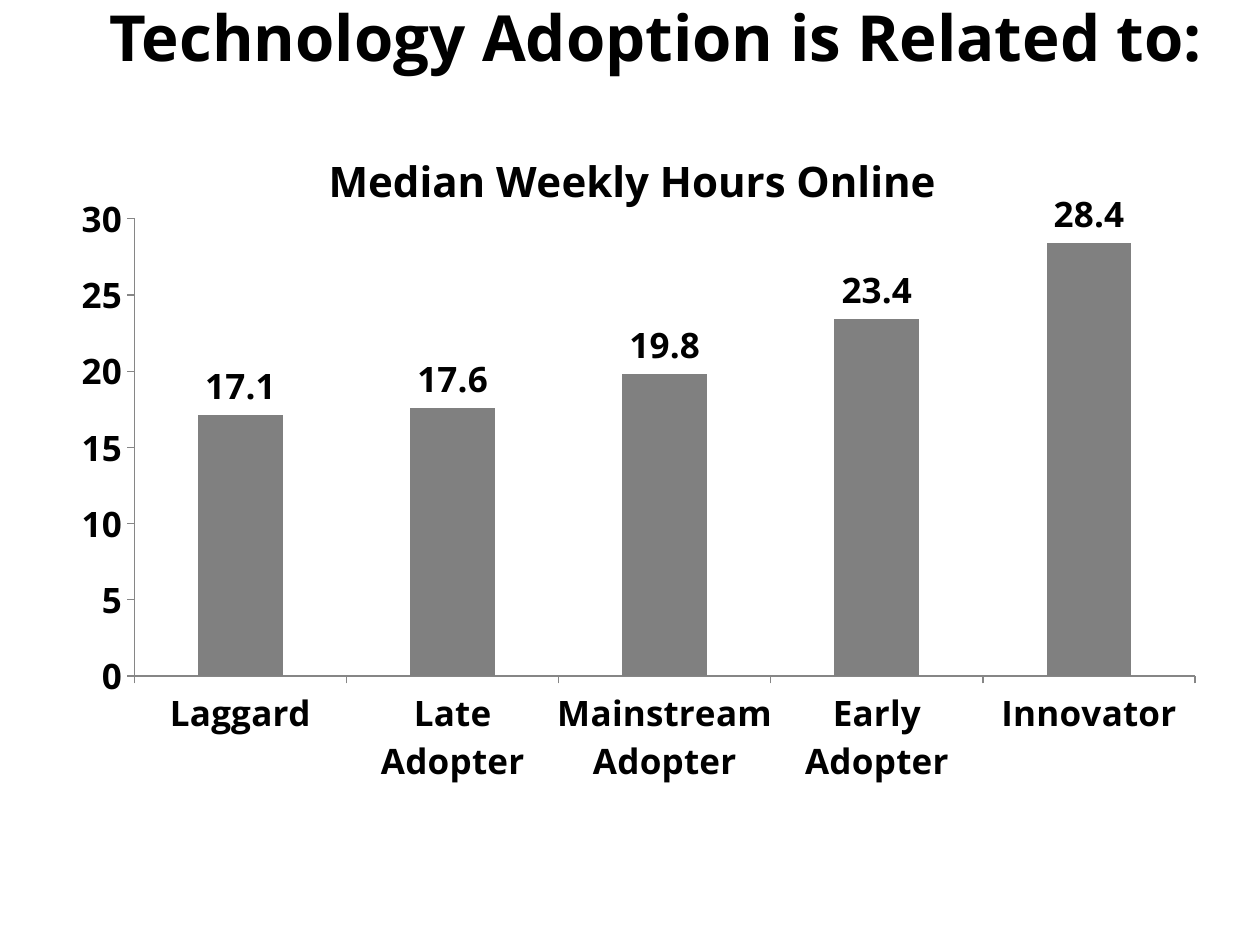
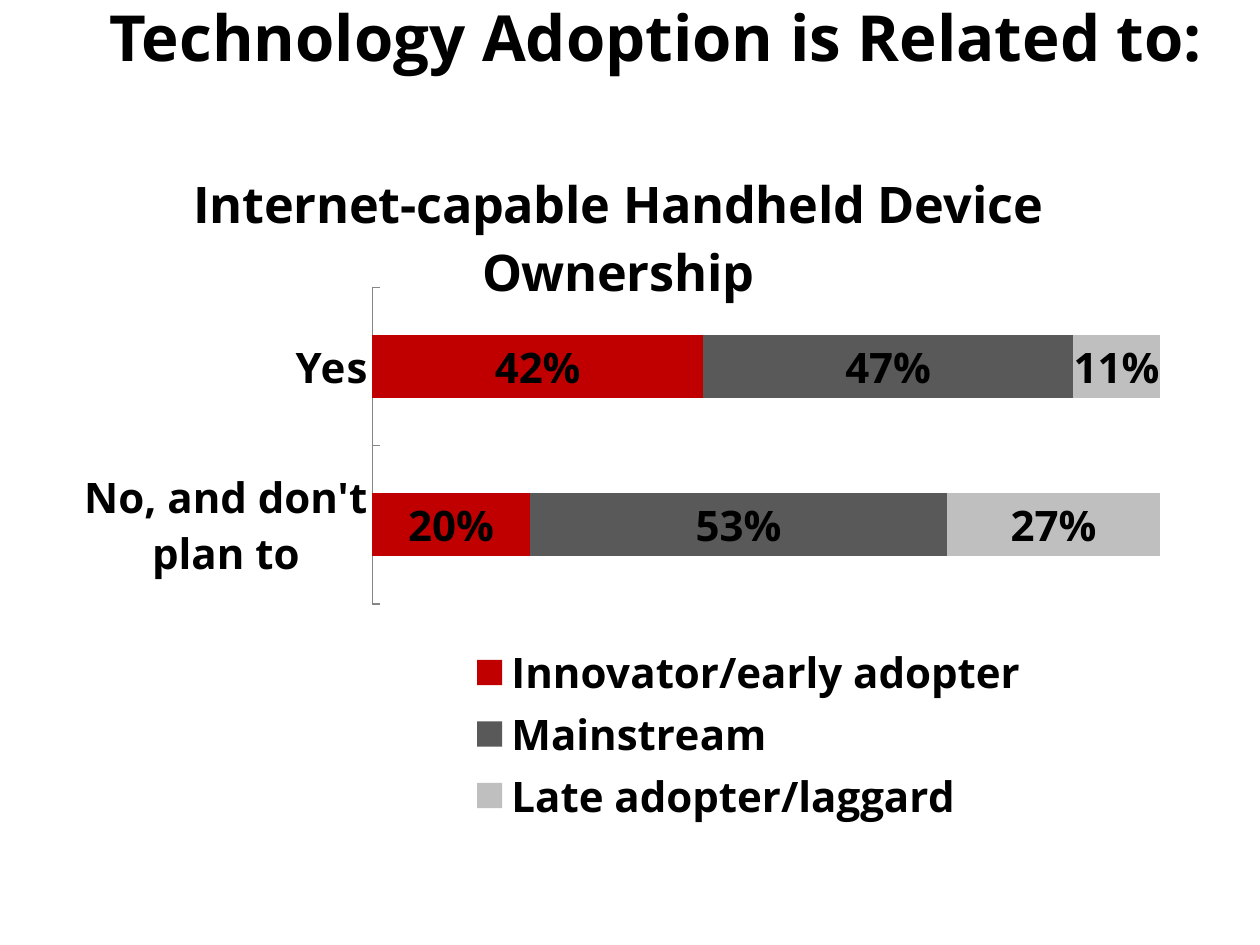
"""Build two chart slides on what technology adoption is related to."""
from dataclasses import dataclass

from lxml import etree
from pptx import Presentation
from pptx import util as u
from pptx.chart.data import CategoryChartData
from pptx.dml.color import RGBColor
from pptx.enum import chart as ch, text
from pptx.oxml.ns import qn

HEADING = "Technology Adoption is Related to:"
HEADING_BOX = (0.42, 0, 9.58, 1.03)

CHARTS = [
    dict(
        title="Median Weekly Hours Online",
        kind=ch.XL_CHART_TYPE.COLUMN_CLUSTERED,
        box=(0.42, 1, 9.25, 5.67),
        size=20, title_size=24,
        title_at=(0.23, 0.02),
        plot=(0.07, 0.13, 0.91, 0.64),
        categories=["Laggard", "Late\nAdopter", "Mainstream\nAdopter",
                    "Early\nAdopter", "Innovator"],
        series=[("Series 1", [17.1, 17.6, 19.8, 23.4, 28.4], "bar")],
        axis_format="General", label_format="####.0",
        label_position=ch.XL_LABEL_POSITION.OUTSIDE_END,
        tick=ch.XL_TICK_MARK.OUTSIDE,
        show_values=True, overlap=0, legend=None,
    ),
    dict(
        title="Internet-capable Handheld Device Ownership",
        kind=ch.XL_CHART_TYPE.BAR_STACKED_100,
        box=(0.25, 1, 9.33, 5.58),
        size=24, title_size=28.8,
        title_at=(0.13, 0.04),
        plot=(0.29, 0.23, 0.67, 0.45),
        categories=["No, and don't plan to", "Yes"],
        series=[("Innovator/early adopter", [0.20, 0.42], "innovator"),
                ("Mainstream", [0.53, 0.47], "mainstream"),
                ("Late adopter/laggard", [0.27, 0.11], "laggard")],
        axis_format="0%", label_format="0%",
        label_position=ch.XL_LABEL_POSITION.CENTER,
        tick=ch.XL_TICK_MARK.INSIDE,
        show_values=False, overlap=100, legend=(0.34, 0.73, 0.54, 0.27),
    ),
]


@dataclass(frozen=True)
class Theme:
    """Colours, font and heading size."""
    font: str = "Open Sans"
    heading: float = 36.3
    ink: str = "000000"
    axis: str = "868686"
    bar: str = "808080"
    innovator: str = "C00000"
    mainstream: str = "595959"
    laggard: str = "BFBFBF"


THEME = Theme()


def rgb(name):
    """Return a theme colour."""
    return RGBColor.from_string(getattr(THEME, name))


def style_font(font, size):
    """Apply the bold theme font."""
    font.name, font.size, font.bold = THEME.font, u.Pt(size), True
    font.color.rgb = rgb("ink")


def write(tf, content, size, align=None, spacing=None):
    """Write one formatted paragraph."""
    p = tf.paragraphs[0]
    p.alignment, p.line_spacing = align, spacing
    r = p.add_run()
    r.text = content
    style_font(r.font, size)


def place(parent, index, fractions, inner=False):
    """Give a chart part a manual layout in fractions of the chart."""
    for old in parent.findall(qn("c:layout")):
        parent.remove(old)
    layout = etree.Element(qn("c:layout"))
    manual = etree.SubElement(layout, qn("c:manualLayout"))
    values = [("layoutTarget", "inner")] if inner else []
    values += [("xMode", "edge"), ("yMode", "edge")]
    values += zip("xywh", fractions)
    for tag, value in values:
        etree.SubElement(manual, qn("c:" + tag)).set("val", str(value))
    parent.insert(index, layout)


def add_heading(s):
    """Fill and place the slide title."""
    sp = s.shapes.title
    sp.left, sp.top, sp.width, sp.height = map(u.Inches, HEADING_BOX)
    tf = sp.text_frame
    tf.word_wrap = True
    tf.auto_size = text.MSO_AUTO_SIZE.NONE
    tf.vertical_anchor = text.MSO_ANCHOR.TOP
    write(tf, HEADING, THEME.heading, align=text.PP_ALIGN.CENTER, spacing=0.9)


def format_axes(chart, d):
    """Style both axes."""
    for axis in (chart.category_axis, chart.value_axis):
        axis.has_major_gridlines = False
        axis.major_tick_mark = d["tick"]
        axis.minor_tick_mark = ch.XL_TICK_MARK.NONE
        axis.format.line.color.rgb = rgb("axis")
        axis.format.line.width = u.Pt(0.75)
        style_font(axis.tick_labels.font, d["size"])
    chart.value_axis.tick_labels.number_format = d["axis_format"]
    chart.value_axis.tick_labels.number_format_is_linked = False
    chart.value_axis.visible = d["show_values"]


def format_series(plot, d):
    """Colour and label the bars."""
    plot.gap_width, plot.overlap = 150, d["overlap"]
    plot.vary_by_categories = False
    for series, (_, _, colour) in zip(plot.series, d["series"]):
        series.format.fill.solid()
        series.format.fill.fore_color.rgb = rgb(colour)
        series.invert_if_negative = False
        labels = series.data_labels
        labels.show_value = True
        labels.number_format = d["label_format"]
        labels.number_format_is_linked = False
        labels.position = d["label_position"]
        style_font(labels.font, d["size"])


def add_chart(s, d):
    """Add one bar chart with its title and legend."""
    data = CategoryChartData()
    data.categories = d["categories"]
    for name, values, _ in d["series"]:
        data.add_series(name, values)
    chart = s.shapes.add_chart(d["kind"], *map(u.Inches, d["box"]), data).chart
    style_font(chart.font, d["size"])
    chart.has_title = True
    title = chart.chart_title
    write(title.text_frame, d["title"], d["title_size"])
    title_xml = title._element
    place(title_xml, 1, d["title_at"])
    title_xml.find(qn("c:overlay")).set("val", "1")
    format_axes(chart, d)
    format_series(chart.plots[0], d)
    place(chart._chartSpace.chart.plotArea, 0, d["plot"], inner=True)
    chart.has_legend = d["legend"] is not None
    if chart.has_legend:
        legend = chart.legend
        legend.position = ch.XL_LEGEND_POSITION.BOTTOM
        legend.include_in_layout = False
        style_font(legend.font, d["size"])
        place(legend._element, 1, d["legend"])


def main():
    """Build and save the slides."""
    prs = Presentation()
    prs.slide_width, prs.slide_height = u.Inches(10), u.Inches(7.5)
    for d in CHARTS:
        s = prs.slides.add_slide(prs.slide_layouts[5])
        add_heading(s)
        add_chart(s, d)
    prs.save("out.pptx")


if __name__ == "__main__":
    main()
